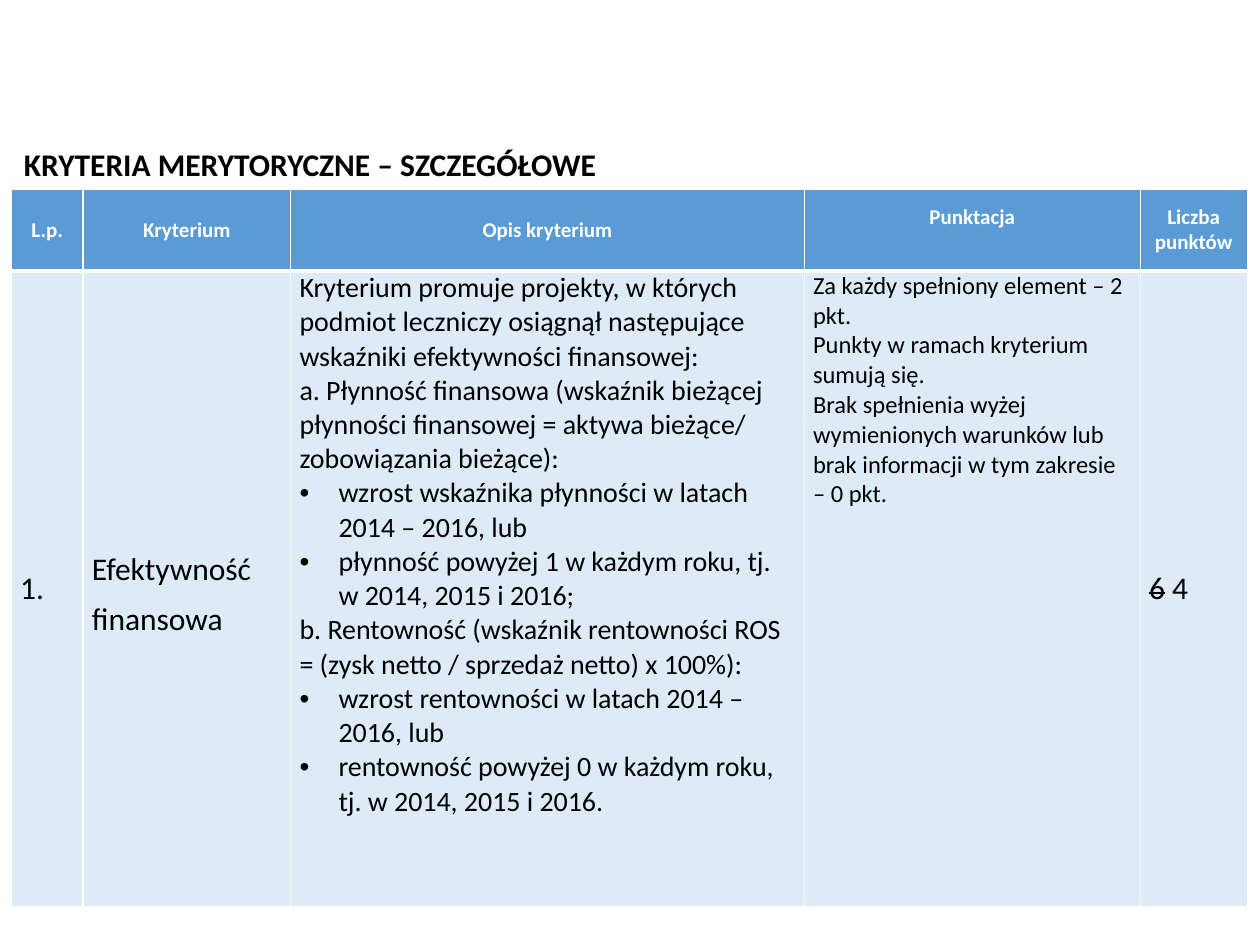
from lxml.etree import SubElement
from pptx import Presentation
from pptx.dml.color import RGBColor
from pptx.enum.text import MSO_ANCHOR as Anchor, MSO_AUTO_SIZE as AutoSize, PP_ALIGN as Align
from pptx.oxml.ns import qn
from pptx.util import Inches, Pt

WHITE = RGBColor(0xFF, 0xFF, 0xFF)
BLACK = RGBColor(0x00, 0x00, 0x00)
HEADER_BLUE = RGBColor(0x5B, 0x9B, 0xD5)
BODY_BLUE = RGBColor(0xDE, 0xEB, 0xF7)
FONT = "Calibri"
BULLET = "•"
THIN, THICK = 1, 3

COLUMN_WIDTHS = [0.57, 1.65, 4.08, 2.67, 0.85]
ROW_HEIGHTS = [0.65, 5.05]
HEADERS = ["L.p.", "Kryterium", "Opis kryterium", "Punktacja", "Liczba punktów"]
DESCRIPTION = [
    "Kryterium promuje projekty, w których podmiot leczniczy osiągnął następujące "
    "wskaźniki efektywności finansowej:",
    "a. Płynność finansowa (wskaźnik bieżącej płynności finansowej = aktywa bieżące/ "
    "zobowiązania bieżące):",
    "•wzrost wskaźnika płynności w latach 2014 – 2016, lub",
    "•płynność powyżej 1 w każdym roku, tj. w 2014, 2015 i 2016;",
    "b. Rentowność (wskaźnik rentowności ROS = (zysk netto / sprzedaż netto) x 100%):",
    "•wzrost rentowności w latach 2014 – 2016, lub",
    "•rentowność powyżej 0 w każdym roku, tj. w 2014, 2015 i 2016.",
]
SCORING = [
    "Za każdy spełniony element – 2 pkt.",
    "Punkty w ramach kryterium sumują się.",
    "Brak spełnienia wyżej wymienionych warunków lub brak informacji w tym zakresie – 0 pkt.",
]
BODY = [
    (["1."], 18, Anchor.MIDDLE),
    (["Efektywność finansowa"], 18, Anchor.MIDDLE),
    (DESCRIPTION, 16, Anchor.TOP),
    (SCORING, 14, Anchor.TOP),
    ([], 18, Anchor.MIDDLE),
]


def set_font(paragraph, size, color, bold):
    font = paragraph.font
    font.name, font.size, font.bold = FONT, Pt(size), bold
    font.color.rgb = color


def add_bullet(paragraph):
    properties = paragraph._p.get_or_add_pPr()
    properties.set("marL", str(Inches(0.31)))
    properties.set("indent", str(Inches(-0.31)))
    SubElement(properties, qn("a:buFont"), typeface="Arial")
    SubElement(properties, qn("a:buChar"), char=BULLET)


def style_cell(cell, fill, top, bottom):
    properties = cell._tc.get_or_add_tcPr()
    for tag, width in (("lnL", THIN), ("lnR", THIN), ("lnT", top), ("lnB", bottom)):
        line = SubElement(properties, qn(f"a:{tag}"), w=str(Pt(width)))
        solid = SubElement(line, qn("a:solidFill"))
        SubElement(solid, qn("a:srgbClr"), val=str(WHITE))
    cell.fill.solid()
    cell.fill.fore_color.rgb = fill


def fill_header(cell, text):
    style_cell(cell, HEADER_BLUE, THIN, THICK)
    cell.vertical_anchor = Anchor.MIDDLE
    paragraph = cell.text_frame.paragraphs[0]
    paragraph.text = text
    paragraph.alignment = Align.CENTER
    set_font(paragraph, 12, WHITE, True)


def fill_body(cell, texts, size, anchor):
    style_cell(cell, BODY_BLUE, THICK, THIN)
    cell.vertical_anchor = anchor
    cell.margin_left = cell.margin_right = Inches(0.07)
    cell.margin_top = cell.margin_bottom = 0
    frame = cell.text_frame
    frame.text = "\n".join(text.lstrip(BULLET) for text in texts)
    for paragraph, text in zip(frame.paragraphs, texts):
        if text.startswith(BULLET):
            add_bullet(paragraph)
        set_font(paragraph, size, BLACK, False)


def fill_points(cell):
    paragraph = cell.text_frame.paragraphs[0]
    old_points = paragraph.add_run()
    old_points.text = "6"
    old_points._r.get_or_add_rPr().set("strike", "sngStrike")
    paragraph.add_run().text = " 4"
    set_font(paragraph, 18, BLACK, False)


def place_title(slide, left, top, width, height):
    title = slide.shapes.title
    title.left, title.top, title.width, title.height = left, top, width, height
    frame = title.text_frame
    frame.text = "KRYTERIA MERYTORYCZNE – SZCZEGÓŁOWE"
    frame.word_wrap = False
    frame.auto_size = AutoSize.SHAPE_TO_FIT_TEXT
    frame.vertical_anchor = Anchor.MIDDLE
    paragraph = frame.paragraphs[0]
    paragraph.alignment = Align.LEFT
    set_font(paragraph, 18, BLACK, True)


def place_criteria_table(slide, left, top, width, height):
    table = slide.shapes.add_table(
        len(ROW_HEIGHTS), len(COLUMN_WIDTHS), left, top, width, height).table
    for column, share in zip(table.columns, COLUMN_WIDTHS):
        column.width = int(width * share / sum(COLUMN_WIDTHS))
    for row, share in zip(table.rows, ROW_HEIGHTS):
        row.height = int(height * share / sum(ROW_HEIGHTS))
    for index, (header, body) in enumerate(zip(HEADERS, BODY)):
        fill_header(table.cell(0, index), header)
        fill_body(table.cell(1, index), *body)
    table.cell(0, HEADERS.index("Punktacja")).margin_bottom = Inches(0.25)
    criterion = table.cell(1, 1).text_frame.paragraphs[0]
    criterion.line_spacing = 1.3
    criterion.space_after = Pt(4)
    fill_points(table.cell(1, 4))


def main():
    presentation = Presentation()
    presentation.slide_width = Inches(10)
    presentation.slide_height = Inches(7.5)
    slide = presentation.slides.add_slide(presentation.slide_layouts[5])
    place_criteria_table(slide, Inches(0.09), Inches(1.5), Inches(9.81), Inches(5.7))
    place_title(slide, Inches(0.09), Inches(1.1), Inches(4.9), Inches(0.4))
    presentation.save("out.pptx")


if __name__ == "__main__":
    main()
